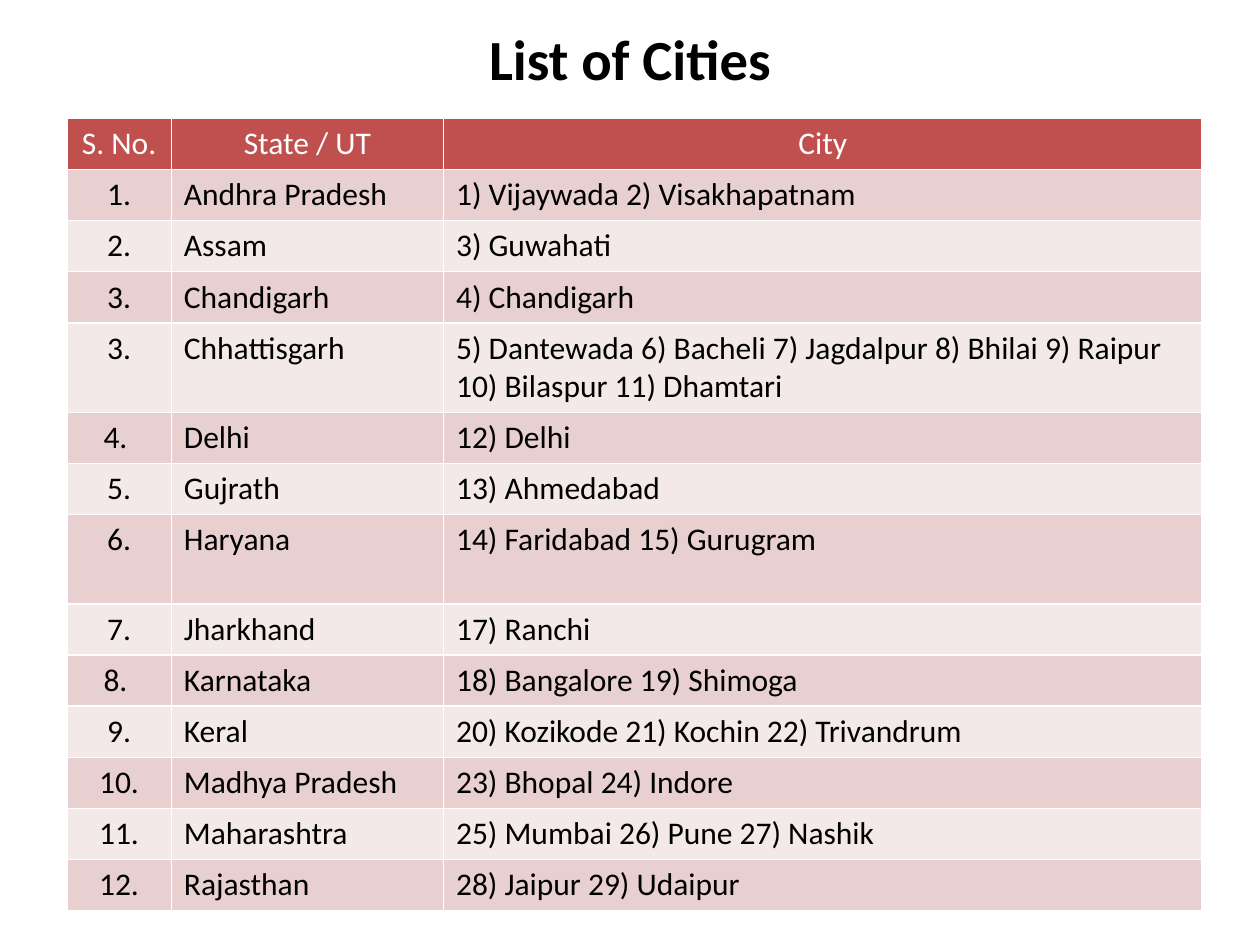
import dataclasses
import pptx
import pptx.dml.color
import pptx.enum.text
import pptx.util

WIDE, HIGH = 10, 7.5
ROW, TALL = 0.405, 0.71
COLS = (0.83, 2.16, 6.02)
INK = {"head": "C0504D", "odd": "E8D0D0", "even": "F4E9E9",
       "white": "FFFFFF", "black": "000000"}
ALIGN = pptx.enum.text.PP_ALIGN
MID = pptx.enum.text.MSO_ANCHOR.MIDDLE


@dataclasses.dataclass
class Entry:
    num: str
    state: str
    city: str
    high: float = ROW


HEAD = Entry("S. No.", "State / UT", "City")
LIST = [
    Entry("1.", "Andhra Pradesh", "1) Vijaywada 2) Visakhapatnam"),
    Entry("2.", "Assam", "3) Guwahati"),
    Entry("3.", "Chandigarh", "4) Chandigarh"),
    Entry("3.", "Chhattisgarh",
          "5) Dantewada 6) Bacheli 7) Jagdalpur 8) Bhilai 9) Raipur "
          "10) Bilaspur 11) Dhamtari", TALL),
    Entry("4. ", "Delhi", "12) Delhi"),
    Entry("5.", "Gujrath", "13) Ahmedabad"),
    Entry("6.", "Haryana", "14) Faridabad 15) Gurugram", TALL),
    Entry("7.", "Jharkhand", "17) Ranchi"),
    Entry("8. ", "Karnataka", "18) Bangalore 19) Shimoga"),
    Entry("9.", "Keral", "20) Kozikode 21) Kochin 22) Trivandrum"),
    Entry("10.", "Madhya Pradesh", "23) Bhopal 24) Indore"),
    Entry("11.", "Maharashtra", "25) Mumbai 26) Pune 27) Nashik"),
    Entry("12.", "Rajasthan", "28) Jaipur 29) Udaipur"),
]


def inch(size: float) -> pptx.util.Length:
    return pptx.util.Inches(size)


def color(name: str) -> pptx.dml.color.RGBColor:
    return pptx.dml.color.RGBColor.from_string(INK[name])


def write(frame, text: str, size: float, ink: str, bold: bool, align) -> None:
    para = frame.paragraphs[0]
    para.alignment = align
    run = para.add_run()
    run.text = text
    style = {"name": "Calibri", "size": pptx.util.Pt(size), "bold": bold}
    for key, value in style.items():
        setattr(run.font, key, value)
    run.font.color.rgb = color(ink)


def fill_row(table, row: int, entry: Entry) -> None:
    table.rows[row].height = inch(entry.high)
    back = "head" if row == 0 else "odd" if row % 2 else "even"
    ink = "black" if row else "white"
    for col, text in enumerate((entry.num, entry.state, entry.city)):
        cell = table.cell(row, col)
        cell.fill.solid()
        cell.fill.fore_color.rgb = color(back)
        align = ALIGN.CENTER if row == 0 or col == 0 else ALIGN.LEFT
        write(cell.text_frame, text, 18, ink, False, align)


def add_title(slide) -> None:
    title = slide.shapes.title
    place = {"left": 0.05 * WIDE, "top": 0.14, "width": 0.9 * WIDE, "height": 0.64}
    for key, value in place.items():
        setattr(title, key, inch(value))
    frame = title.text_frame
    frame.auto_size = pptx.enum.text.MSO_AUTO_SIZE.NONE
    frame.vertical_anchor = MID
    write(frame, "List of Cities", 32.4, "black", True, ALIGN.CENTER)


def add_list(slide) -> None:
    rows = [HEAD, *LIST]
    high = sum(entry.high for entry in rows)
    table = slide.shapes.add_table(len(rows), len(COLS), inch(0.53), inch(0.94),
                                   inch(sum(COLS)), inch(high)).table
    for col, wide in zip(table.columns, COLS):
        col.width = inch(wide)
    for row, entry in enumerate(rows):
        fill_row(table, row, entry)


def main() -> None:
    deck = pptx.Presentation()
    deck.slide_width, deck.slide_height = inch(WIDE), inch(HIGH)
    slide = deck.slides.add_slide(deck.slide_layouts[5])
    add_title(slide)
    add_list(slide)
    deck.save("out.pptx")


if __name__ == "__main__":
    main()
